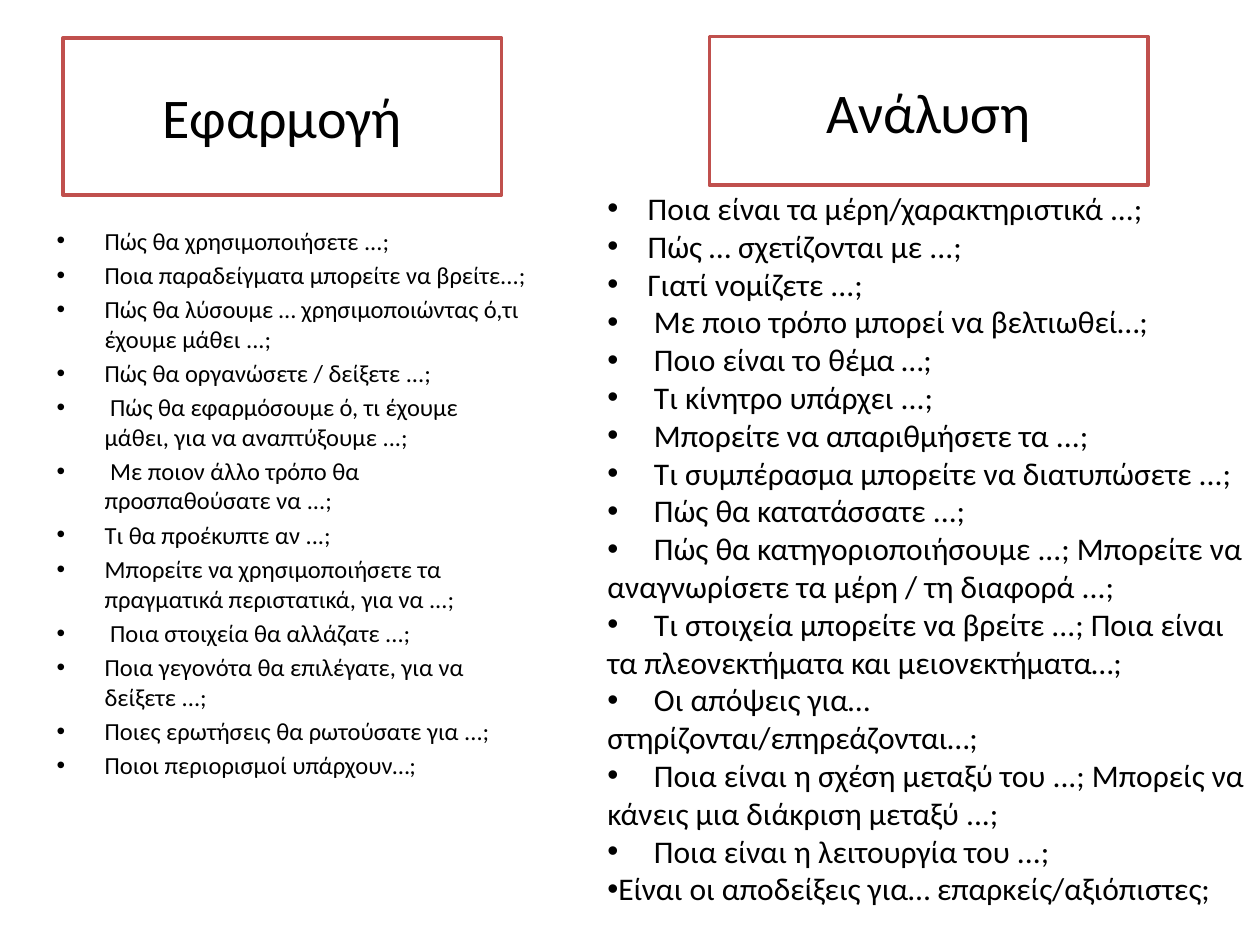
from lxml.etree import SubElement
from pptx import Presentation
from pptx.dml.color import RGBColor
from pptx.enum.shapes import MSO_SHAPE
from pptx.enum.text import MSO_ANCHOR, MSO_AUTO_SIZE, PP_ALIGN
from pptx.oxml.ns import qn
from pptx.util import Inches, Pt

THEME = {
    "font": "Calibri",
    "text": RGBColor(0x00, 0x00, 0x00),
    "fill": RGBColor(0xFF, 0xFF, 0xFF),
    "border": RGBColor(0xC0, 0x50, 0x4D),
    "heading": 32,
    "application": 14,
    "analysis": 18,
}

APPLICATION = [
    "Πώς θα χρησιμοποιήσετε ...;",
    "Ποια παραδείγματα μπορείτε να βρείτε...;",
    "Πώς θα λύσουμε … χρησιμοποιώντας ό,τι έχουμε μάθει ...;",
    "Πώς θα οργανώσετε / δείξετε ...;",
    " Πώς θα εφαρμόσουμε ό, τι έχουμε μάθει, για να αναπτύξουμε ...;",
    " Με ποιον άλλο τρόπο θα προσπαθούσατε να ...;",
    "Τι θα προέκυπτε αν ...;",
    "Μπορείτε να χρησιμοποιήσετε τα πραγματικά περιστατικά, για να ...;",
    " Ποια στοιχεία θα αλλάζατε ...;",
    "Ποια γεγονότα θα επιλέγατε, για να δείξετε ...;",
    "Ποιες ερωτήσεις θα ρωτούσατε για ...;",
    "Ποιοι περιορισμοί υπάρχουν…;",
]

# Distance from bullet to text in inches, with the questions that share it
ANALYSIS = [
    (0.32, [
        "Ποια είναι τα μέρη/χαρακτηριστικά ...;",
        "Πώς … σχετίζονται με ...;",
        "Γιατί νομίζετε ...;",
    ]),
    (0.37, [
        "Με ποιο τρόπο μπορεί να βελτιωθεί…;",
        "Ποιο είναι το θέμα …;",
        "Τι κίνητρο υπάρχει ...;",
        "Μπορείτε να απαριθμήσετε τα ...;",
        "Τι συμπέρασμα μπορείτε να διατυπώσετε ...;",
        "Πώς θα κατατάσσατε ...;",
        "Πώς θα κατηγοριοποιήσουμε ...; Μπορείτε να αναγνωρίσετε τα μέρη / τη διαφορά ...;",
        "Τι στοιχεία μπορείτε να βρείτε ...; Ποια είναι τα πλεονεκτήματα και μειονεκτήματα…;",
        "Οι απόψεις για… στηρίζονται/επηρεάζονται…;",
        "Ποια είναι η σχέση μεταξύ του ...; Μπορείς να κάνεις μια διάκριση μεταξύ ...;",
        "Ποια είναι η λειτουργία του ...;",
    ]),
    (0, ["Είναι οι αποδείξεις για… επαρκείς/αξιόπιστες;"]),
]


def place(sp, left, top, width, height):
    sp.left, sp.top = Inches(left), Inches(top)
    sp.width, sp.height = Inches(width), Inches(height)


def format_runs(p, size):
    for r in p.runs:
        r.font.name = THEME["font"]
        r.font.size = Pt(size)
        r.font.color.rgb = THEME["text"]


def style_heading(sp, text):
    sp.fill.solid()
    sp.fill.fore_color.rgb = THEME["fill"]
    sp.line.color.rgb = THEME["border"]
    sp.line.width = Pt(2)
    tf = sp.text_frame
    tf.text = text
    tf.vertical_anchor = MSO_ANCHOR.MIDDLE
    p = tf.paragraphs[0]
    p.alignment = PP_ALIGN.CENTER
    format_runs(p, THEME["heading"])


def fill_list(sp, items, size, hang=0, gap=0):
    """Write (tab, text) items; a tab moves only the first line of its item."""
    tf = sp.text_frame
    tf.word_wrap = True
    tf.auto_size = MSO_AUTO_SIZE.NONE
    for i, (tab, text) in enumerate(items):
        p = tf.add_paragraph() if i else tf.paragraphs[0]
        p.text = "\t" + text if tab else text
        p.space_before = Pt(gap if i else 0)
        pPr = p._p.get_or_add_pPr()
        pPr.set("marL", str(Inches(hang)))
        pPr.set("indent", str(-Inches(hang)))
        if tab:
            tabs = SubElement(pPr, qn("a:tabLst"))
            SubElement(tabs, qn("a:tab"), pos=str(Inches(tab)), algn="l")
        format_runs(p, size)


def main():
    prs = Presentation()
    prs.slide_width, prs.slide_height = Inches(10), Inches(7.5)
    s = prs.slides.add_slide(prs.slide_layouts.get_by_name("Two Content"))
    title, left_list, right_list = s.placeholders

    place(title, 0.5, 0.3, 3.48, 1.25)
    style_heading(title, "Εφαρμογή")
    place(left_list, 0.35, 1.74, 3.94, 5.4)
    fill_list(left_list, [(0, text) for text in APPLICATION],
              THEME["application"], hang=0.38, gap=2.8)

    heading = s.shapes.add_shape(MSO_SHAPE.RECTANGLE, 0, 0, 0, 0)
    heading.shadow.inherit = False
    place(heading, 5.63, 0.29, 3.48, 1.18)
    style_heading(heading, "Ανάλυση")
    place(right_list, 4.72, 1.45, 5.28, 5.85)
    fill_list(right_list, [(tab, text) for tab, group in ANALYSIS for text in group],
              THEME["analysis"])

    prs.save("out.pptx")


if __name__ == "__main__":
    main()
